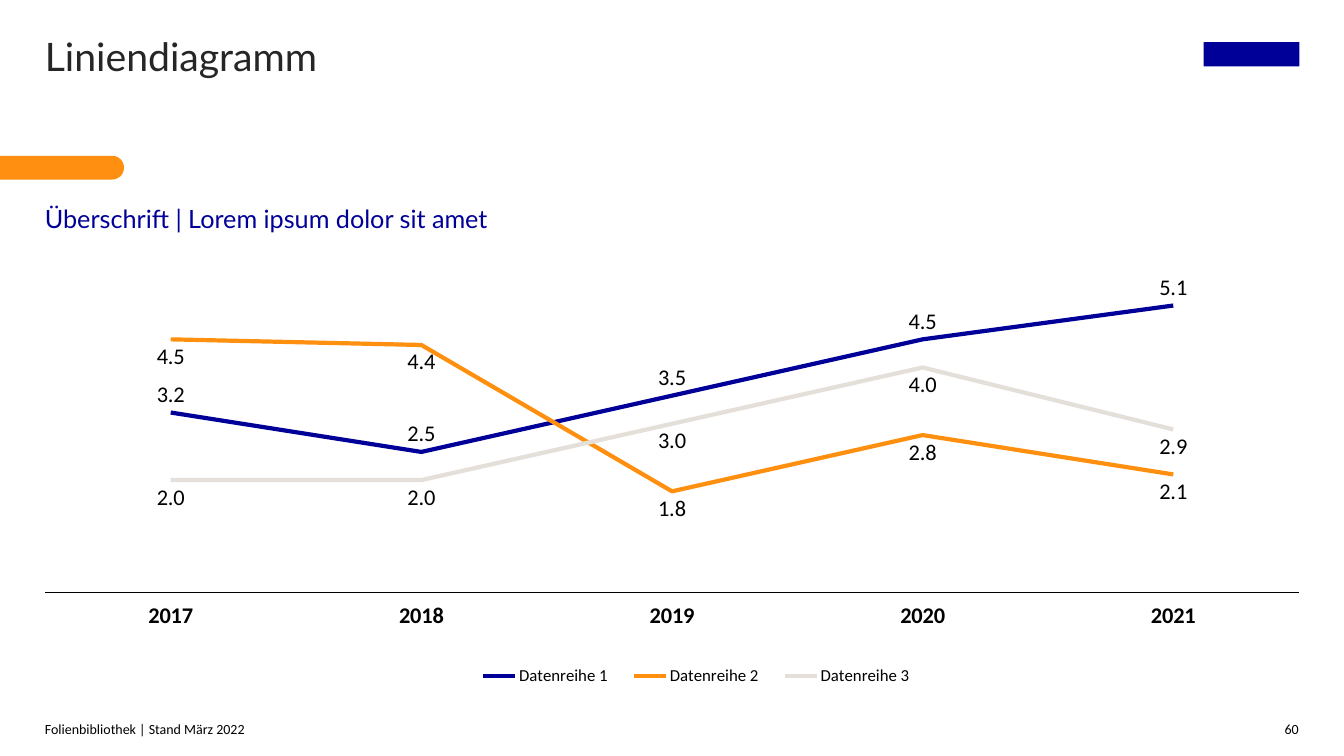
from dataclasses import dataclass

from lxml.etree import SubElement
from pptx import Presentation
from pptx.chart.chart import Chart
from pptx.chart.data import CategoryChartData
from pptx.dml.color import RGBColor
from pptx.dml.fill import FillFormat
from pptx.enum.chart import XL_CHART_TYPE as ChartType
from pptx.enum.chart import XL_LABEL_POSITION as LabelPosition
from pptx.enum.chart import XL_LEGEND_POSITION as LegendPosition
from pptx.enum.chart import XL_TICK_LABEL_POSITION as TickLabels
from pptx.enum.chart import XL_TICK_MARK as TickMark
from pptx.enum.shapes import MSO_SHAPE as ShapeKind
from pptx.enum.text import MSO_ANCHOR as Anchor
from pptx.enum.text import PP_ALIGN as Align
from pptx.oxml.ns import qn
from pptx.shapes.autoshape import Shape
from pptx.slide import Slide
from pptx.text.text import Font
from pptx.util import Pt

NAVY = "000099"
ORANGE = "FE8F11"
BLACK = "000000"
MARGIN = 32.1
CONTENT_WIDTH = 895.9
YEARS = ["2017", "2018", "2019", "2020", "2021"]


@dataclass
class Label:
    text: str
    left: float
    top: float
    width: float
    height: float
    size: float
    font: str
    color: str
    anchor: Anchor = Anchor.TOP
    align: Align = Align.LEFT
    wrap: bool = True


@dataclass
class DataSeries:
    name: str
    values: list[float]
    color: str
    position: LabelPosition


@dataclass
class ChartArea:
    parent: str
    x: float
    y: float
    w: float
    h: float
    target: str = ""


LABELS = [
    Label("Liniendiagramm", MARGIN, 23, 692, 39.6, 28, "Lato", "262626"),
    Label("Überschrift | Lorem ipsum dolor sit amet",
          MARGIN, 145.4, 584, 25.2, 18, "Lato", NAVY),
    Label("Folienbibliothek | Stand März 2022",
          MARGIN, 515.5, 796, 11.5, 10, "Calibri", BLACK, Anchor.BOTTOM),
    Label("60", 905.4, 515.5, 22.3, 11.5, 10, "Calibri", BLACK,
          Anchor.BOTTOM, Align.RIGHT, False),
]

SERIES = [
    DataSeries("Datenreihe 1", [3.2, 2.5, 3.5, 4.5, 5.1], NAVY, LabelPosition.ABOVE),
    DataSeries("Datenreihe 2", [4.5, 4.4, 1.8, 2.8, 2.1], "FF8F0F", LabelPosition.BELOW),
    DataSeries("Datenreihe 3", [2, 2, 3, 4, 2.9], "E5DFDA", LabelPosition.BELOW),
]

CHART_AREAS = [
    ChartArea("c:plotArea", 0, 0, 1, 0.774, "inner"),
    ChartArea("c:legend", 0.333, 0.93, 0.373, 0.07),
]


def paint(fill: FillFormat, color: str) -> None:
    fill.solid()
    fill.fore_color.rgb = RGBColor.from_string(color)


def style_font(font: Font, name: str, size: float, color: str, bold: bool = False) -> None:
    font.name = name
    font.size = Pt(size)
    font.bold = bold
    paint(font.fill, color)


def add_label(slide: Slide, label: Label) -> None:
    shape = slide.shapes.add_textbox(
        Pt(label.left), Pt(label.top), Pt(label.width), Pt(label.height))
    frame = shape.text_frame
    frame.margin_left = frame.margin_top = frame.margin_right = frame.margin_bottom = 0
    frame.word_wrap = label.wrap
    frame.vertical_anchor = label.anchor
    frame.text = label.text
    paragraph = frame.paragraphs[0]
    paragraph.alignment = label.align
    style_font(paragraph.runs[0].font, label.font, label.size, label.color)


def add_plain_shape(slide: Slide, kind: ShapeKind, left: float, top: float,
                    width: float, height: float, color: str) -> Shape:
    shape = slide.shapes.add_shape(kind, Pt(left), Pt(top), Pt(width), Pt(height))
    shape.shadow.inherit = False
    paint(shape.fill, color)
    shape.line.fill.background()
    return shape


def add_accent_tab(slide: Slide, top: float, length: float, thickness: float) -> None:
    offset = (length - thickness) / 2
    shape = add_plain_shape(slide, ShapeKind.ROUND_2_SAME_RECTANGLE,
                            offset, top - offset, thickness, length, ORANGE)
    shape.rotation = 90
    shape.adjustments[0] = 0.5


def place_chart_area(chart: Chart, area: ChartArea) -> None:
    parent = chart.element.find(".//" + qn(area.parent))
    layout = parent.find(qn("c:layout"))
    if layout is None:
        layout = SubElement(parent, qn("c:layout"))
        parent.insert(1 if area.parent == "c:legend" else 0, layout)
    manual = SubElement(layout, qn("c:manualLayout"))
    settings = {"layoutTarget": area.target, "xMode": "edge", "yMode": "edge",
                "x": area.x, "y": area.y, "w": area.w, "h": area.h}
    for tag, value in settings.items():
        if value != "":
            SubElement(manual, qn(f"c:{tag}")).set("val", str(value))


def add_line_chart(slide: Slide) -> None:
    data = CategoryChartData(number_format="0.0")
    data.categories = YEARS
    for item in SERIES:
        data.add_series(item.name, item.values)
    chart = slide.shapes.add_chart(
        ChartType.LINE, Pt(MARGIN), Pt(182.1), Pt(CONTENT_WIDTH), Pt(311.8), data).chart
    style_font(chart.font, "Calibri", 10, BLACK)
    chart.has_title = False
    chart.has_legend = True
    chart.legend.position = LegendPosition.BOTTOM
    chart.legend.include_in_layout = False
    style_font(chart.legend.font, "Calibri", 12, BLACK)
    chart.plots[0].vary_by_categories = False

    category_axis = chart.category_axis
    category_axis.major_tick_mark = TickMark.NONE
    category_axis.minor_tick_mark = TickMark.NONE
    category_axis.tick_label_position = TickLabels.LOW
    category_axis.tick_labels.offset = 0
    category_axis.format.line.width = Pt(0.75)
    paint(category_axis.format.line.fill, BLACK)
    style_font(category_axis.tick_labels.font, "Calibri", 16, BLACK, True)

    value_axis = chart.value_axis
    value_axis.minimum_scale = 0
    value_axis.maximum_scale = 6
    value_axis.has_major_gridlines = False
    value_axis.visible = False

    for item, series in zip(SERIES, chart.plots[0].series):
        series.smooth = False
        series.format.line.width = Pt(3)
        paint(series.format.line.fill, item.color)
        labels = series.data_labels
        labels.show_value = True
        labels.position = item.position
        labels.number_format = "#,##0.0"
        labels.number_format_is_linked = False
        style_font(labels.font, "Calibri", 16, BLACK)
    for area in CHART_AREAS:
        place_chart_area(chart, area)


def main() -> None:
    presentation = Presentation()
    presentation.slide_width = Pt(960)
    presentation.slide_height = Pt(540)
    slide = presentation.slides.add_slide(presentation.slide_layouts[6])
    paint(slide.background.fill, "FFFFFF")
    add_accent_tab(slide, 111.3, 88.6, 17)
    add_plain_shape(slide, ShapeKind.RECTANGLE, 859.7, 30.2, 68.4, 17.3, NAVY)
    for label in LABELS:
        add_label(slide, label)
    add_line_chart(slide)
    presentation.save("out.pptx")


if __name__ == "__main__":
    main()
